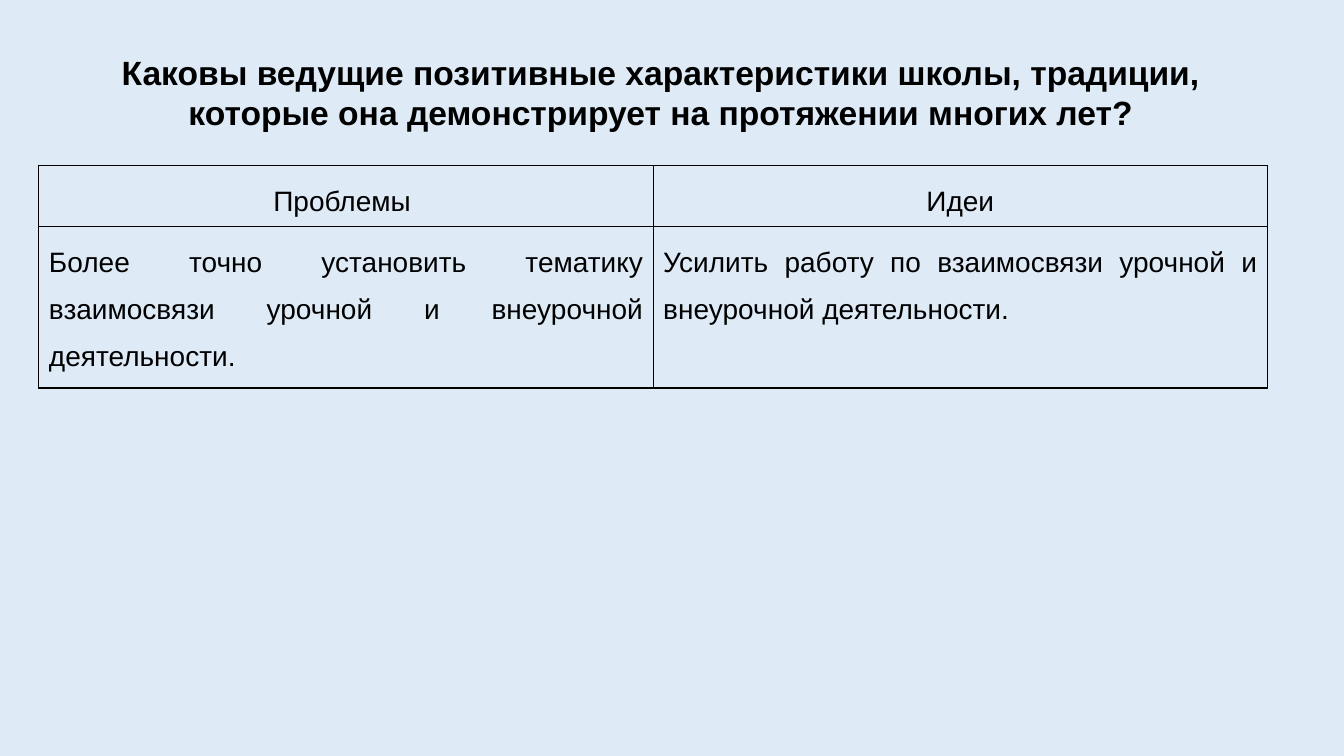
from lxml.etree import SubElement
from pptx import Presentation
from pptx.dml.color import RGBColor
from pptx.enum.text import MSO_ANCHOR, MSO_AUTO_SIZE, PP_ALIGN
from pptx.oxml.ns import qn
from pptx.util import Cm, Pt

TITLE = ("Каковы ведущие позитивные характеристики школы, традиции, "
         "которые она демонстрирует на протяжении многих лет?")
ROWS = [
    ("Проблемы ", "Идеи"),
    ("Более точно установить тематику взаимосвязи урочной и внеурочной деятельности.",
     "Усилить работу по взаимосвязи урочной и внеурочной деятельности."),
]
ROW_HEIGHTS = [1.54, 4.06]
ROW_ALIGNMENTS = [PP_ALIGN.CENTER, PP_ALIGN.JUSTIFY]
COLUMN_WIDTH = 15.48
LEFT = 0.98
BACKGROUND = "DEEBF7"
INK = "000000"


def color(value):
    return RGBColor.from_string(value)


def format_paragraph(paragraph, size, alignment, spacing, bold=False):
    paragraph.alignment = alignment
    paragraph.line_spacing = spacing
    paragraph.font.name = "Arial"
    paragraph.font.size = Pt(size)
    paragraph.font.bold = bold
    paragraph.font.color.rgb = color(INK)


def add_borders(cell):
    properties = cell._tc.get_or_add_tcPr()
    for position, side in enumerate(("a:lnL", "a:lnR", "a:lnT", "a:lnB")):
        line = SubElement(properties, qn(side), w=str(Pt(1)))
        fill = SubElement(line, qn("a:solidFill"))
        SubElement(fill, qn("a:srgbClr"), val=INK)
        properties.insert(position, line)


def add_title(slide):
    title = slide.shapes.title
    title.left, title.top = Cm(LEFT), Cm(1.17)
    title.width, title.height = Cm(31.34), Cm(2.31)
    frame = title.text_frame
    frame.text = TITLE
    frame.word_wrap = True
    frame.auto_size = MSO_AUTO_SIZE.SHAPE_TO_FIT_TEXT
    frame.vertical_anchor = MSO_ANCHOR.TOP
    format_paragraph(frame.paragraphs[0], 24, PP_ALIGN.CENTER, 1.0, True)


def add_table(slide):
    columns = len(ROWS[0])
    table = slide.shapes.add_table(
        len(ROWS), columns, Cm(LEFT), Cm(4.17),
        Cm(COLUMN_WIDTH * columns), Cm(sum(ROW_HEIGHTS))).table
    table.first_row = table.horz_banding = False
    for column in table.columns:
        column.width = Cm(COLUMN_WIDTH)
    for row, height, alignment, texts in zip(table.rows, ROW_HEIGHTS, ROW_ALIGNMENTS, ROWS):
        row.height = Cm(height)
        for cell, text in zip(row.cells, texts):
            cell.text = text
            cell.fill.background()
            add_borders(cell)
            format_paragraph(cell.text_frame.paragraphs[0], 20, alignment, 1.5)


def main():
    presentation = Presentation()
    presentation.slide_width, presentation.slide_height = Cm(33.87), Cm(19.05)
    slide = presentation.slides.add_slide(presentation.slide_layouts[5])
    slide.background.fill.solid()
    slide.background.fill.fore_color.rgb = color(BACKGROUND)
    add_title(slide)
    add_table(slide)
    presentation.save("out.pptx")


if __name__ == "__main__":
    main()
